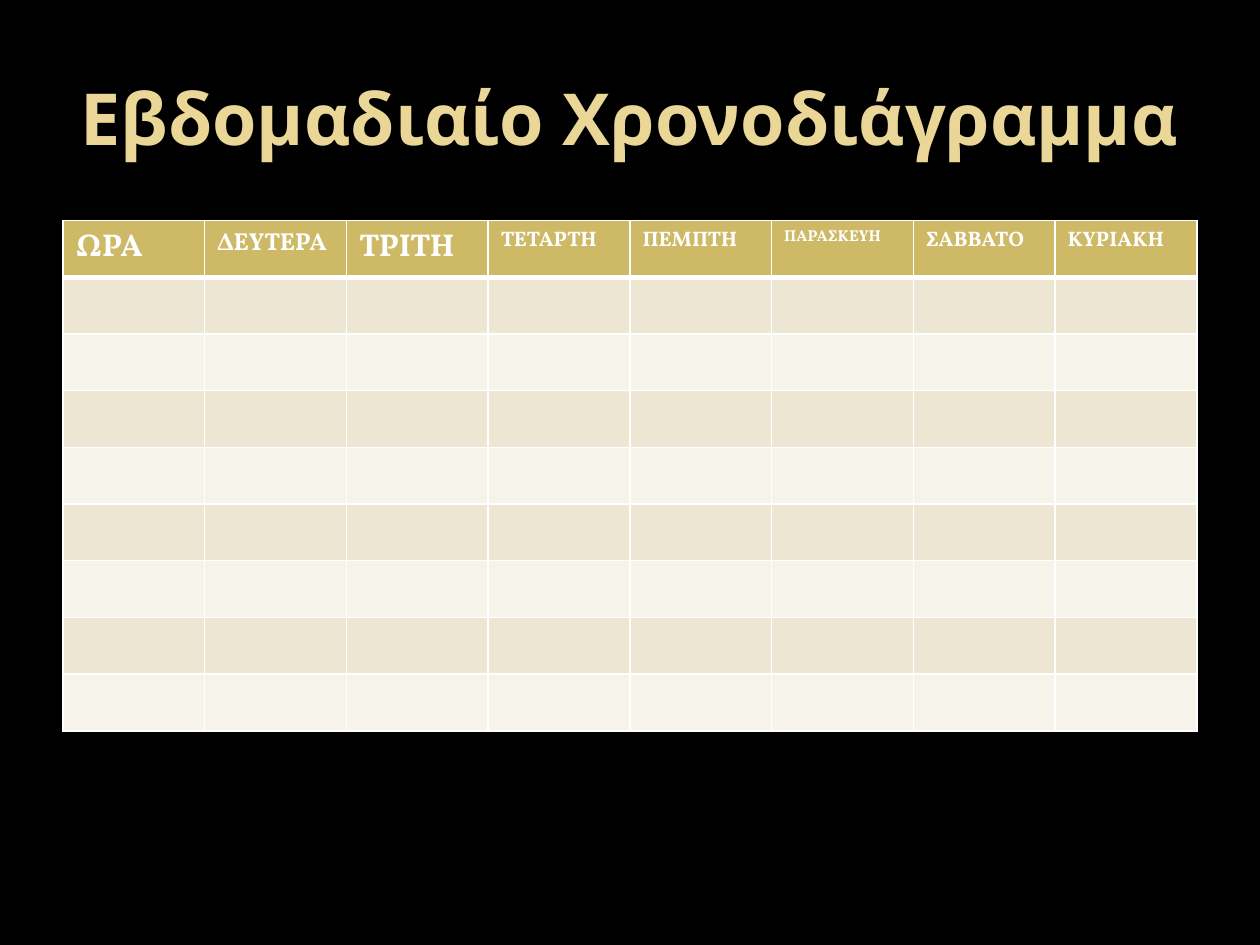
from lxml.etree import SubElement
from pptx import Presentation
from pptx.dml.color import RGBColor
from pptx.enum.text import MSO_ANCHOR, PP_ALIGN
from pptx.oxml.ns import qn
from pptx.util import Inches, Pt

TITLE = "Εβδομαδιαίο Χρονοδιάγραμμα"
# Column heading and its text size
HEADINGS = [
    ("ΩΡΑ", 18), ("ΔΕΥΤΕΡΑ", 14), ("ΤΡΙΤΗ", 18), ("ΤΕΤΑΡΤΗ", 12),
    ("ΠΕΜΠΤΗ", 12), ("ΠΑΡΑΣΚΕΥΗ", 9), ("ΣΑΒΒΑΤΟ", 12), ("ΚΥΡΙΑΚΗ", 12),
]
TIME_SLOTS = 8
COLORS = {
    "background": "000000", "title": "EAD696", "header": "CEB966",
    "odd": "EDE6D3", "even": "F6F3EA", "white": "FFFFFF",
}
LEFT, WIDTH, ROW_HEIGHT = 0.5, 9, 0.45


def color(name):
    return RGBColor.from_string(COLORS[name])


def style_font(font, name, size, color_name):
    font.name, font.size, font.bold = name, Pt(size), True
    font.color.rgb = color(color_name)


def add_borders(cell, widths):
    properties = cell._tc.get_or_add_tcPr()
    for side, width in zip("LRTB", widths):
        line = SubElement(properties, qn(f"a:ln{side}"), w=str(Pt(width)))
        fill = SubElement(line, qn("a:solidFill"))
        SubElement(fill, qn("a:srgbClr"), val=COLORS["white"])


presentation = Presentation()
presentation.slide_width, presentation.slide_height = Inches(10), Inches(7.5)
slide = presentation.slides.add_slide(presentation.slide_layouts[5])
slide.background.fill.solid()
slide.background.fill.fore_color.rgb = color("background")

# Title
title = slide.shapes.title
title.left, title.top = Inches(LEFT), Inches(0.3)
title.width, title.height = Inches(WIDTH), Inches(1.25)
title.text_frame.text = TITLE
title.text_frame.vertical_anchor = MSO_ANCHOR.MIDDLE
paragraph = title.text_frame.paragraphs[0]
paragraph.alignment = PP_ALIGN.CENTER
style_font(paragraph.font, "Open Sans", 41, "title")

# Weekly timetable
row_count = TIME_SLOTS + 1
table = slide.shapes.add_table(
    row_count, len(HEADINGS), Inches(LEFT), Inches(1.75),
    Inches(WIDTH), Inches(ROW_HEIGHT * row_count)).table

for row_index, row in enumerate(table.rows):
    row.height = Inches(ROW_HEIGHT)
    band = "header" if row_index == 0 else "odd" if row_index % 2 else "even"
    top = 3 if row_index == 1 else 1
    bottom = 3 if row_index == 0 else 1
    for cell in row.cells:
        add_borders(cell, (1, 1, top, bottom))
        cell.fill.solid()
        cell.fill.fore_color.rgb = color(band)

# Column headings
for cell, (heading, size) in zip(table.rows[0].cells, HEADINGS):
    cell.text = heading
    style_font(cell.text_frame.paragraphs[0].font, "Vollkorn", size, "white")

presentation.save("out.pptx")
